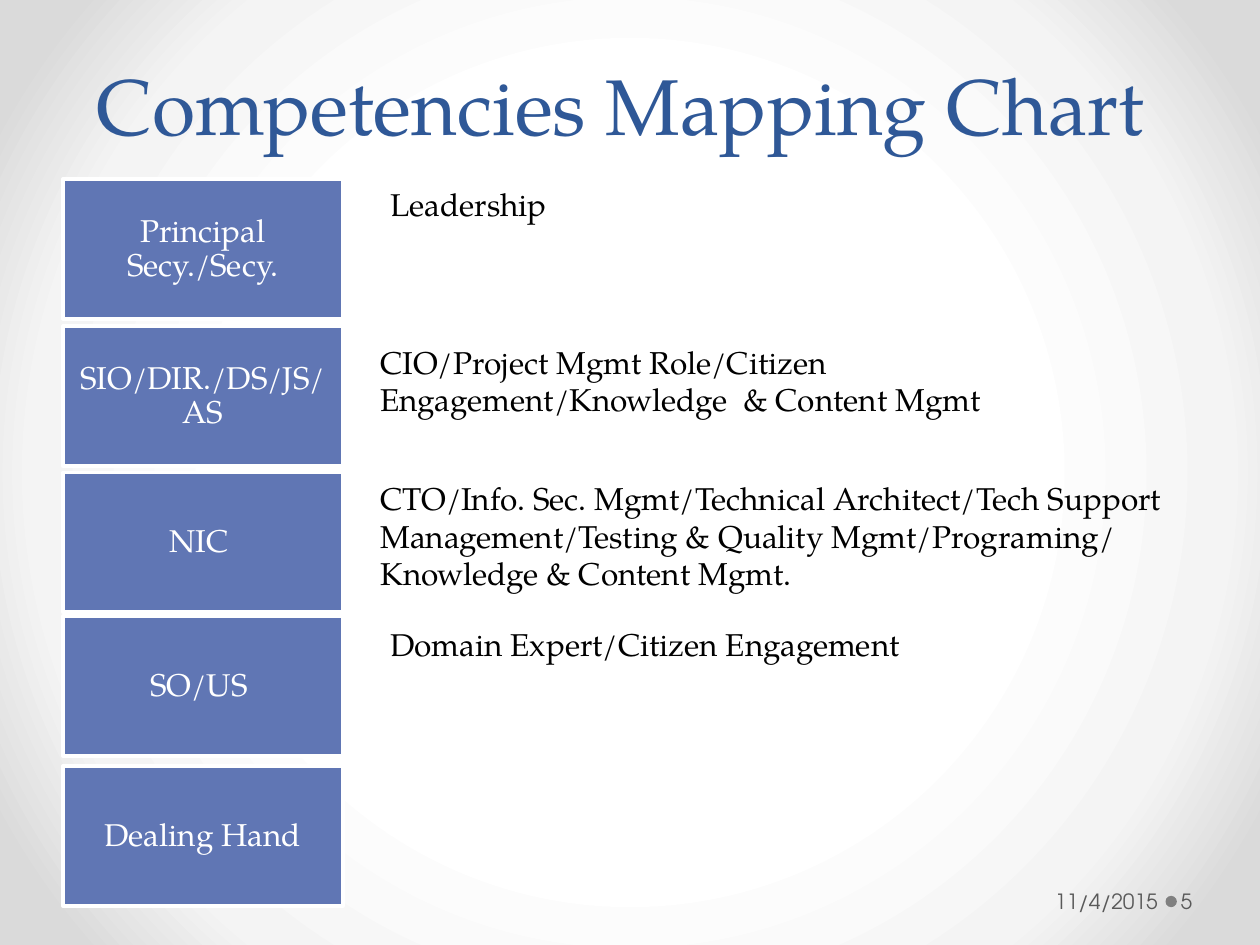
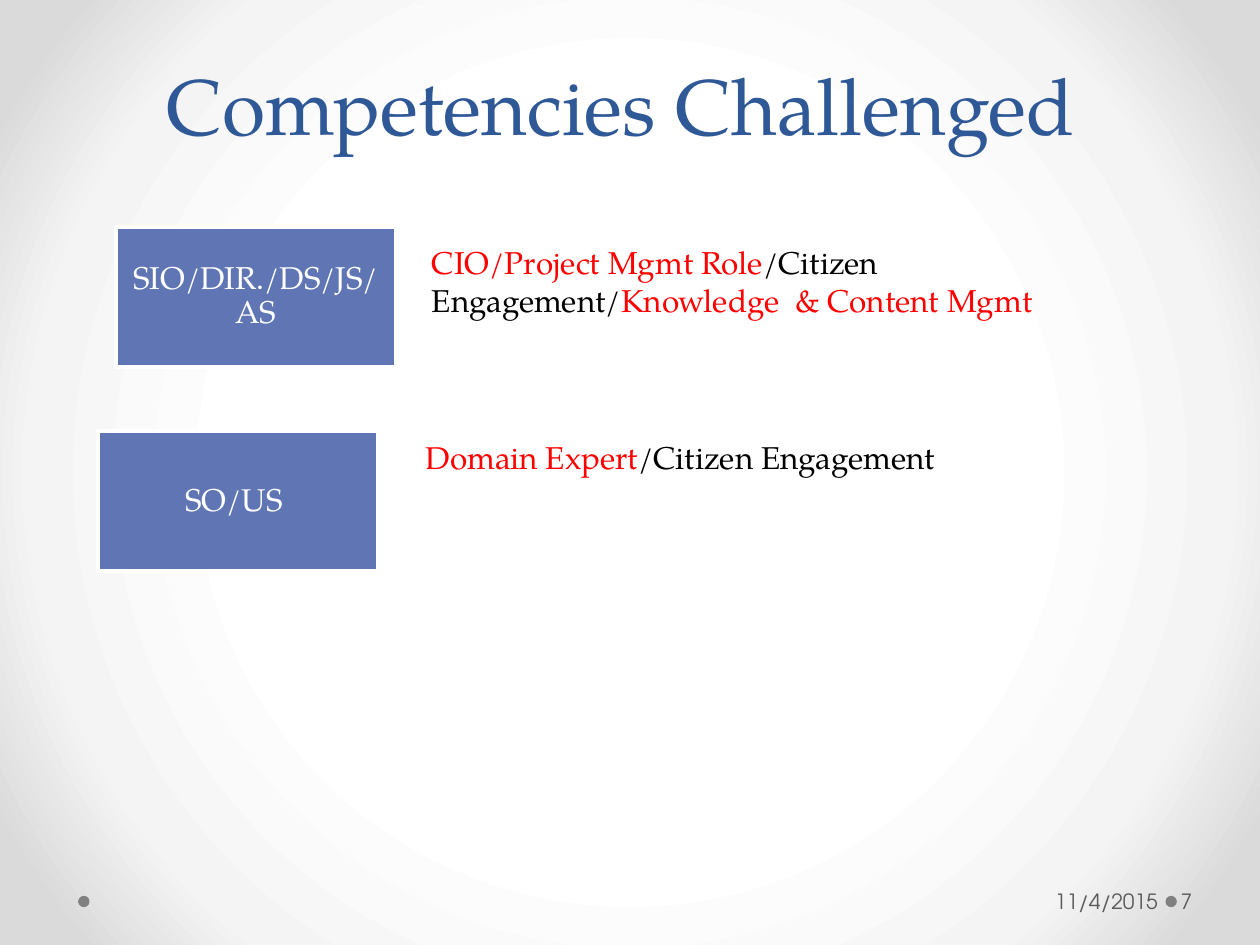
from dataclasses import dataclass

from lxml import etree
from pptx import Presentation
from pptx import util as u
from pptx.dml.color import RGBColor
from pptx.enum import shapes, text
from pptx.oxml import parse_xml
from pptx.oxml.ns import nsdecls, qn

PX = 9144
COLORS = {
    "title": "2F5897",
    "box": "6076B4",
    "white": "FFFFFF",
    "body": "000000",
    "alert": "FF0000",
    "footer": "595959",
    "dot": "808080",
}
BACKGROUND_STOPS = ((50, "FFFFFF"), (76, "F4F4F4"), (92, "DADADA"))
SERIF = "TeX Gyre Pagella"
SANS = "TeX Gyre Adventor"
BOX_W, BOX_H, DOT = 222, 111, 9
FOOTER_TOP, FOOTER_H, DOT_TOP = 695, 40, 711
DATE = "11/4/2015"

MIDDLE = text.MSO_ANCHOR.MIDDLE
CENTER = text.PP_ALIGN.CENTER


@dataclass(frozen=True)
class Style:
    size: int
    font: str = SERIF
    align: text.PP_ALIGN = text.PP_ALIGN.LEFT
    anchor: text.MSO_ANCHOR = text.MSO_ANCHOR.TOP
    spacing: float | u.Length | None = None
    insets: tuple[int, int, int, int] = (10, 5, 10, 5)
    fit: text.MSO_AUTO_SIZE = text.MSO_AUTO_SIZE.NONE


@dataclass(frozen=True)
class Run:
    words: str
    color: str = "body"


@dataclass(frozen=True)
class Role:
    left: int
    top: int
    name: str


@dataclass(frozen=True)
class Skills:
    left: int
    top: int
    width: int
    height: int
    runs: tuple[Run, ...]


@dataclass(frozen=True)
class Page:
    title: str
    number: str
    roles: tuple[Role, ...]
    skills: tuple[Skills, ...]
    dots: tuple[int, ...]


TITLE = Style(45, align=CENTER, anchor=text.MSO_ANCHOR.BOTTOM, spacing=u.Pt(58))
ROLE = Style(18, align=CENTER, anchor=MIDDLE, spacing=0.9, insets=(1, 1, 1, 1))
SKILLS = Style(18, fit=text.MSO_AUTO_SIZE.SHAPE_TO_FIT_TEXT)
DATE_STYLE = Style(12, SANS, text.PP_ALIGN.RIGHT, MIDDLE, insets=(10, 5, 5, 5))
NUMBER_STYLE = Style(12, SANS, anchor=MIDDLE, insets=(3, 5, 5, 5))

OFFICERS = "SIO/DIR./DS/JS/AS"
SECTION = "SO/US "

PAGES = (
    Page(
        "Competencies Mapping Chart ",
        "5",
        tuple(
            Role(50, top, name)
            for top, name in (
                (142, "Principal Secy./Secy."),
                (259, OFFICERS),
                (375, "NIC "),
                (489, SECTION),
                (608, "Dealing Hand"),
            )
        ),
        (
            Skills(300, 142, 500, 40, (Run("Leadership"),)),
            Skills(292, 267, 500, 71, (
                Run("CIO/Project Mgmt Role/Citizen Engagement/Knowledge  & Content Mgmt"),
            )),
            Skills(292, 375, 667, 101, (
                Run("CTO/Info. Sec. Mgmt/Technical Architect/Tech Support "
                    "Management/Testing & Quality Mgmt/Programing/ "
                    "Knowledge & Content Mgmt."),
            )),
            Skills(300, 491, 667, 40, (Run("Domain Expert/Citizen Engagement"),)),
        ),
        (925,),
    ),
    Page(
        "Competencies Challenged ",
        "7",
        (Role(92, 180, OFFICERS), Role(78, 342, SECTION)),
        (
            Skills(333, 188, 500, 71, (
                Run("CIO/Project Mgmt Role", "alert"),
                Run("/Citizen Engagement/"),
                Run("Knowledge  & Content Mgmt", "alert"),
            )),
            Skills(328, 343, 572, 40, (
                Run("Domain Expert", "alert"),
                Run("/Citizen Engagement"),
            )),
        ),
        (62, 925),
    ),
)


def px(*lengths: int) -> list[int]:
    return [length * PX for length in lengths]


def rgb(name: str) -> RGBColor:
    return RGBColor.from_string(COLORS[name])


def apply(target, values: dict) -> None:
    for name, value in values.items():
        setattr(target, name, value)


def write(sp, runs: tuple[Run, ...], style: Style) -> None:
    tf = sp.text_frame
    left, top, right, bottom = px(*style.insets)
    apply(tf, {
        "word_wrap": True,
        "auto_size": style.fit,
        "vertical_anchor": style.anchor,
        "margin_left": left,
        "margin_top": top,
        "margin_right": right,
        "margin_bottom": bottom,
    })
    p = tf.paragraphs[0]
    apply(p, {"alignment": style.align, "line_spacing": style.spacing})
    for run in runs:
        r = p.add_run()
        r.text = run.words
        apply(r.font, {"name": style.font, "size": u.Pt(style.size)})
        r.font.color.rgb = rgb(run.color)


def add_text(s, box: tuple[int, int, int, int], runs: tuple[Run, ...], style: Style) -> None:
    write(s.shapes.add_textbox(*px(*box)), runs, style)


def add_filled(s, kind, box: tuple[int, int, int, int], color: str):
    sp = s.shapes.add_shape(kind, *px(*box))
    sp.shadow.inherit = False
    sp.fill.solid()
    sp.fill.fore_color.rgb = rgb(color)
    sp.line.fill.background()
    return sp


def add_role(s, role: Role) -> None:
    box = (role.left, role.top, BOX_W, BOX_H)
    sp = add_filled(s, shapes.MSO_SHAPE.RECTANGLE, box, "box")
    sp.line.color.rgb = rgb("white")
    sp.line.width = u.Pt(2.25)
    write(sp, (Run(role.name, "white"),), ROLE)


def set_background(s) -> None:
    s.background.fill.solid()
    solid = next(s.background._cSld.iter(qn("a:solidFill")))
    grad = parse_xml(f'<a:gradFill rotWithShape="1" {nsdecls("a")}/>')
    stops = etree.SubElement(grad, qn("a:gsLst"))
    for percent, color in BACKGROUND_STOPS:
        stop = etree.SubElement(stops, qn("a:gs"), pos=str(percent * 1000))
        etree.SubElement(stop, qn("a:srgbClr"), val=color)
    circle = etree.SubElement(grad, qn("a:path"), path="circle")
    etree.SubElement(circle, qn("a:fillToRect"), dict.fromkeys("ltrb", "50000"))
    solid.getparent().replace(solid, grad)


def add_footer(s, page: Page) -> None:
    for left in page.dots:
        add_filled(s, shapes.MSO_SHAPE.OVAL, (left, DOT_TOP, DOT, DOT), "dot")
    for left, width, words, style in (
        (696, 228, DATE, DATE_STYLE),
        (934, 61, page.number, NUMBER_STYLE),
    ):
        add_text(s, (left, FOOTER_TOP, width, FOOTER_H), (Run(words, "footer"),), style)


def add_page(prs, page: Page) -> None:
    s = prs.slides.add_slide(prs.slide_layouts[6])
    set_background(s)
    add_text(s, (50, 25, 900, 100), (Run(page.title, "title"),), TITLE)
    for role in page.roles:
        add_role(s, role)
    for item in page.skills:
        add_text(s, (item.left, item.top, item.width, item.height), item.runs, SKILLS)
    add_footer(s, page)


def main() -> None:
    prs = Presentation()
    apply(prs, dict(zip(("slide_width", "slide_height"), px(1000, 750))))
    for page in PAGES:
        add_page(prs, page)
    prs.save("out.pptx")


if __name__ == "__main__":
    main()
